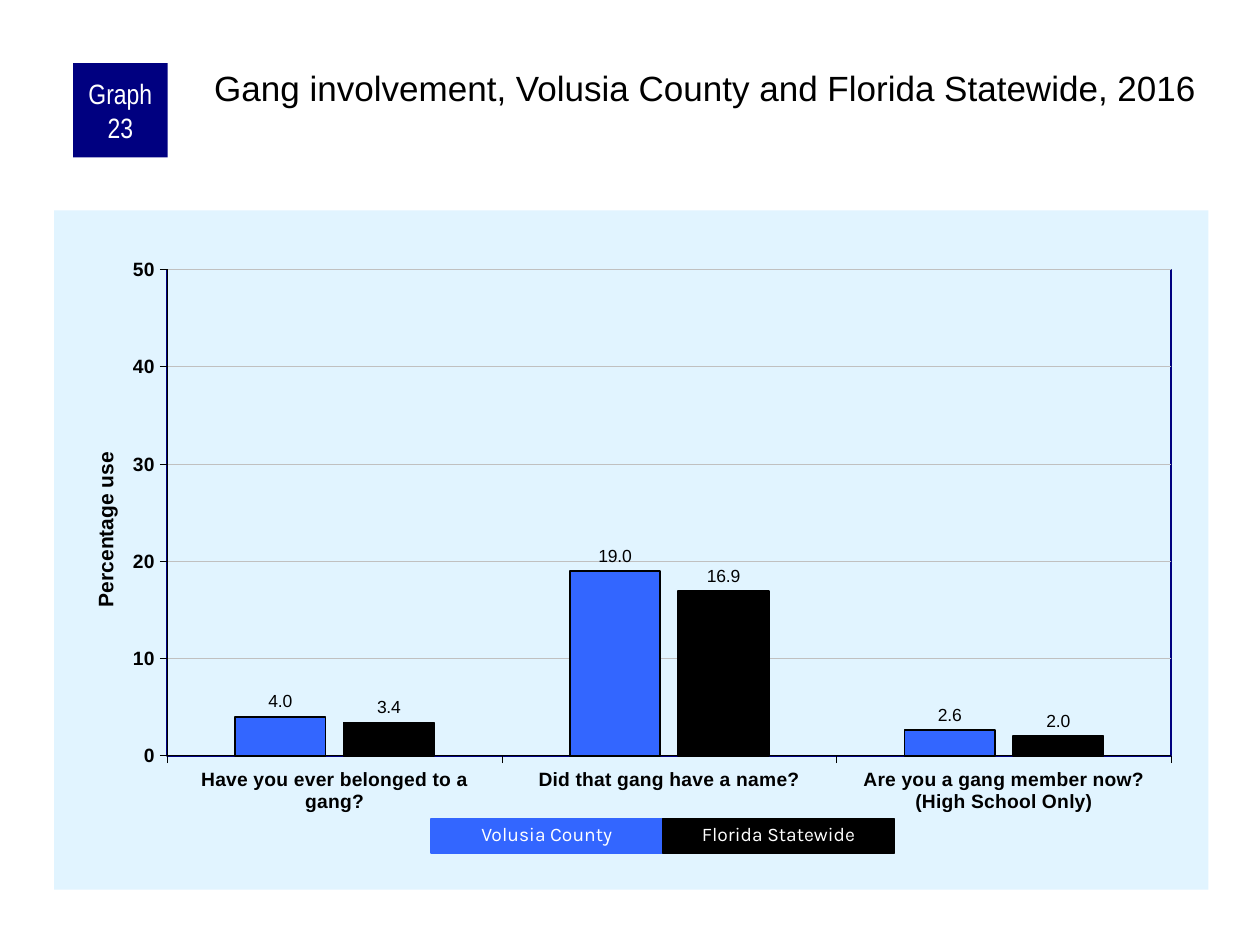
import pptx
import pptx.util
import pptx.chart.data
import pptx.dml.color
import pptx.enum.chart
import pptx.enum.shapes
import pptx.enum.text
import pptx.oxml
import pptx.oxml.ns

WIDE, HIGH = 10, 7.5
THEME = dict(
    navy="000080", blue="3366FF", black="000000", white="FFFFFF",
    panel="E1F4FF", grid="C0C0C0",
    sans="Arial", narrow="Arial Narrow", round="Karla",
    head=20, badge=16, title=12, base=11.5, axis=11, key=11, label=10,
)
HEAD = "Gang involvement, Volusia County and Florida Statewide, 2016"
BADGE = "Graph 23"
UNIT = "Percentage use"
CATS = [
    "Have you ever belonged to a gang?",
    "Did that gang have a name?",
    "Are you a gang member now?\n(High School Only)",
]
SERIES = [
    ("Volusia County", "blue", (4.0, 19.0, 2.6)),
    ("Florida Statewide", "black", (3.4, 16.9, 2.0)),
]
CHART = (0.43, 1.67, 9.16, 5.39)
PLOT = dict(x=0.098, y=0.087, w=0.87, h=0.716)
TOP = 0.5
KEY = (3.42, 6.5, 1.84, 0.27)

Pt = pptx.util.Pt
NS = pptx.oxml.ns.nsdecls("c", "a")
ALIGN = pptx.enum.text.PP_ALIGN
RECT = pptx.enum.shapes.MSO_SHAPE.RECTANGLE


def color(name):
    return pptx.dml.color.RGBColor.from_string(THEME[name])


def inches(box):
    return [pptx.util.Inches(n) for n in box]


def style(font, size, tint="black", face="sans", bold=False):
    font.size, font.name, font.bold = Pt(THEME[size]), THEME[face], bold
    font.color.rgb = color(tint)


def stroke(line, tint, width):
    line.color.rgb, line.width = color(tint), Pt(width)


def write(frame, text, size, tint="black", face="sans", align=ALIGN.LEFT,
          anchor=pptx.enum.text.MSO_ANCHOR.TOP, inset=(0.1, 0.05, 0.1, 0.05),
          space=None):
    frame.word_wrap, frame.vertical_anchor = True, anchor
    (frame.margin_left, frame.margin_top,
     frame.margin_right, frame.margin_bottom) = inches(inset)
    para = frame.paragraphs[0]
    para.alignment, para.line_spacing = align, space
    run = para.add_run()
    run.text = text
    style(run.font, size, tint, face)


def block(slide, box, fill, line=None):
    shape = slide.shapes.add_shape(RECT, *inches(box))
    shape.shadow.inherit = False
    shape.fill.solid()
    shape.fill.fore_color.rgb = color(fill)
    if line:
        stroke(shape.line, line, 0.75)
    else:
        shape.line.fill.background()
    return shape.text_frame


def layout(target, inner=False):
    kind = '<c:layoutTarget val="inner"/>' if inner else ""
    modes = '<c:xMode val="edge"/><c:yMode val="edge"/>'
    parts = "".join(f'<c:{k} val="{v}"/>' for k, v in target.items())
    return pptx.oxml.parse_xml(
        f"<c:layout {NS}><c:manualLayout>{kind}{modes}{parts}"
        "</c:manualLayout></c:layout>")


def area(fill, line):
    return pptx.oxml.parse_xml(f"<c:spPr {NS}>{fill}{line}</c:spPr>")


def solid(name):
    return f'<a:solidFill><a:srgbClr val="{THEME[name]}"/></a:solidFill>'


def frame_chart(chart):
    root = chart.element.find(pptx.oxml.ns.qn("c:chart"))
    plot = root.find(pptx.oxml.ns.qn("c:plotArea"))
    for old in plot.findall(pptx.oxml.ns.qn("c:layout")):
        plot.remove(old)
    plot.insert(0, layout(PLOT, inner=True))
    plot.append(area("<a:noFill/>", f'<a:ln w="{Pt(1)}">{solid("navy")}</a:ln>'))
    root.addnext(area(solid("panel"), "<a:ln><a:noFill/></a:ln>"))


def draw_axes(chart):
    for axis in (chart.category_axis, chart.value_axis):
        style(axis.tick_labels.font, "axis", bold=True)
        stroke(axis.format.line, "black", 0.25)
        axis.major_tick_mark = pptx.enum.chart.XL_TICK_MARK.OUTSIDE
        axis.minor_tick_mark = pptx.enum.chart.XL_TICK_MARK.NONE
    axis.minimum_scale, axis.maximum_scale, axis.major_unit = 0, 50, 10
    axis.has_major_gridlines = True
    stroke(axis.major_gridlines.format.line, "grid", 0.25)
    title = axis.axis_title
    run = title.text_frame.paragraphs[0].add_run()
    run.text = UNIT
    style(run.font, "title", bold=True)
    title.text_frame._txBody.bodyPr.set("rot", "-5400000")
    title.text_frame._txBody.bodyPr.set("vert", "horz")
    rich = title._element.find(pptx.oxml.ns.qn("c:tx"))
    for old in title._element.findall(pptx.oxml.ns.qn("c:layout")):
        title._element.remove(old)
    rich.addnext(layout(dict(x=0.03, y=0.35)))


def draw_chart(slide):
    data = pptx.chart.data.CategoryChartData(number_format="0.0")
    data.categories = CATS
    for name, _, vals in SERIES:
        data.add_series(name, vals)
    kind = pptx.enum.chart.XL_CHART_TYPE.COLUMN_CLUSTERED
    chart = slide.shapes.add_chart(kind, *inches(CHART), data).chart
    style(chart.font, "base")
    chart.has_legend = chart.has_title = False
    plot = chart.plots[0]
    plot.gap_width, plot.overlap, plot.vary_by_categories = 150, -20, False
    for bars, (_, tint, _) in zip(plot.series, SERIES):
        bars.format.fill.solid()
        bars.format.fill.fore_color.rgb = color(tint)
        stroke(bars.format.line, "black", 1)
        labels = bars.data_labels
        labels.show_value = True
        labels.number_format, labels.number_format_is_linked = "0.0", False
        labels.position = pptx.enum.chart.XL_LABEL_POSITION.OUTSIDE_END
        style(labels.font, "label")
    draw_axes(chart)
    chart.value_axis.tick_labels.number_format = "0"
    chart.value_axis.tick_labels.number_format_is_linked = False
    frame_chart(chart)


def main():
    deck = pptx.Presentation()
    deck.slide_width, deck.slide_height = inches((WIDE, HIGH))
    slide = deck.slides.add_slide(deck.slide_layouts[6])
    middle = pptx.enum.text.MSO_ANCHOR.MIDDLE
    draw_chart(slide)
    write(block(slide, (0.58, TOP, 0.75, 0.75), "navy"), BADGE, "badge",
          tint="white", face="narrow", align=ALIGN.CENTER, anchor=middle,
          inset=(0.05, 0, 0.05, 0))
    head = slide.shapes.add_textbox(*inches((1.67, TOP, 7.92, 0.83)))
    write(head.text_frame, HEAD, "head", inset=(0.03, 0.03, 0, 0))
    left, top, wide, high = KEY
    for col, (name, tint, _) in enumerate(SERIES):
        box = (left + col * wide, top, wide, high)
        write(block(slide, box, tint, line=tint), name, "key", tint="white",
              face="round", align=ALIGN.CENTER, space=0.9)
    deck.save("out.pptx")


if __name__ == "__main__":
    main()
